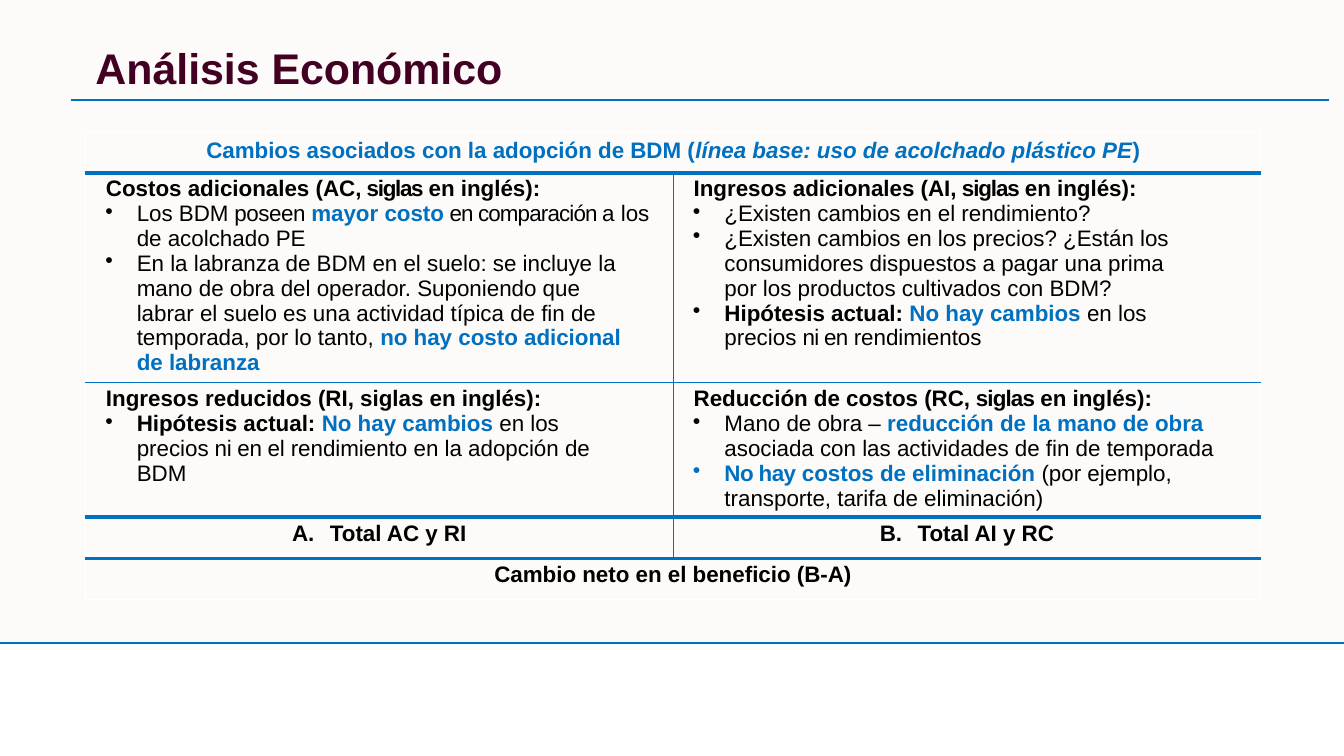
from dataclasses import dataclass

from lxml.etree import SubElement
from pptx import Presentation
from pptx.dml.color import RGBColor
from pptx.enum.shapes import MSO_CONNECTOR, MSO_SHAPE
from pptx.enum.text import MSO_ANCHOR, PP_ALIGN
from pptx.oxml import parse_xml
from pptx.oxml.ns import nsdecls, qn
from pptx.util import Pt

COLORS = {"blue": "0070C0", "black": "000000", "white": "FFFFFF",
          "plum": "420023", "cream": "FDFBF9"}
FONT = "Arial"
SLIDE_WIDTH, SLIDE_HEIGHT = 960, 540
FOOTER_TOP = 459.4
COLUMN_WIDTH = 419.8
ROW_HEIGHTS = [29.5, 150, 96, 29.5, 29.5]
TOP_MARGINS = [4.5, 2.4, 2.4, 3, 3]


@dataclass(frozen=True)
class Span:
    text: str
    bold: bool = False
    color: str = "black"
    italic: bool = False
    spacing: float = 0


@dataclass(frozen=True)
class Line:
    spans: list[Span]
    left: float = 0
    indent: float = 0
    right: float = 0
    before: float = 0
    centered: bool = False
    bullet: str = ""
    number: int = 0


@dataclass(frozen=True)
class Edge:
    color: str
    width: float


OUTER, INNER, THICK = Edge("white", 1), Edge("blue", 0.75), Edge("blue", 3)
ROW_EDGES = [OUTER, THICK, INNER, THICK, THICK, OUTER]


def strong(text: str, color: str = "black", spacing: float = 0) -> Span:
    return Span(text, True, color, spacing=spacing)


def heading(start: str, spacing: float = 0) -> Line:
    return Line([strong(start), strong(" siglas ", spacing=spacing),
                 strong("en inglés):")], left=7.5)


def bullet(*spans: Span, right: float = 0, before: float = 0) -> Line:
    return Line(list(spans), 29.5, -22.5, right, before, bullet="•")


def total(text: str, number: int) -> Line:
    return Line([strong(text)], 27, -27, centered=True, number=number)


def centered(*spans: Span) -> Line:
    return Line(list(spans), centered=True)


HYPOTHESIS = [strong("Hipótesis actual: "), strong("No hay cambios ", "blue")]

BUDGET = [
    [[centered(strong("Cambios asociados con la adopción de BDM (", "blue"),
               Span("línea base: uso de acolchado plástico PE", True, "blue", True),
               strong(")", "blue"))]],
    [[heading("Costos adicionales (AC,", -0.9),
      bullet(Span("Los BDM"), Span(" poseen ", spacing=-0.3),
             strong("mayor costo", "blue"),
             Span(" en comparación a", spacing=-0.6),
             Span(" los de acolchado PE"), before=0.2),
      bullet(Span("En la labranza de BDM en el suelo: se incluye la mano de obra "
                  "del operador. Suponiendo que labrar el suelo es una actividad "
                  "típica de fin de temporada, por lo tanto, "),
             strong("no hay costo adicional de labranza", "blue"), right=23)],
     [heading("Ingresos adicionales (AI,", -0.8),
      bullet(Span("¿Existen cambios en el rendimiento?"), before=0.2),
      bullet(Span("¿Existen cambios en los precios? ¿Están los consumidores "
                  "dispuestos a pagar una prima por los productos cultivados "
                  "con BDM?"), right=46),
      bullet(*HYPOTHESIS, Span("en los precios "), Span("ni en ", spacing=-0.5),
             Span("rendimientos"), right=46)]],
    [[heading("Ingresos reducidos (RI,"),
      bullet(*HYPOTHESIS, Span("en los precios"), Span(" ni en el ", spacing=-0.2),
             Span("rendimiento en la adopción de BDM"), right=30, before=0.2)],
     [heading("Reducción de costos (RC,", -0.6),
      bullet(Span("Mano de obra – "),
             strong("reducción de la mano de obra ", "blue"),
             Span("asociada con las actividades de fin de temporada"), before=0.2),
      bullet(strong("No hay ", "blue", -0.4),
             strong("costos de eliminación ", "blue"),
             Span("(por ejemplo, transporte, tarifa de eliminación)"))]],
    [[total("Total AC y RI", 1)], [total("Total AI y RC", 2)]],
    [[centered(strong("Cambio neto en el beneficio (B-A)"))]],
]


def rgb(color: str) -> RGBColor:
    return RGBColor.from_string(COLORS[color])


def add_rule(shapes, left: float, top: float, right: float) -> None:
    rule = shapes.add_connector(MSO_CONNECTOR.STRAIGHT, Pt(left), Pt(top), Pt(right), Pt(top))
    rule.line.color.rgb = rgb("blue")
    rule.line.width = Pt(1.5)
    SubElement(rule._element.spPr, qn("a:effectLst"))


def write_line(paragraph, line: Line) -> None:
    properties = paragraph._p.get_or_add_pPr()
    for name, length in (("marL", line.left), ("marR", line.right), ("indent", line.indent)):
        properties.set(name, str(int(Pt(length))))
    paragraph.alignment = PP_ALIGN.CENTER if line.centered else PP_ALIGN.LEFT
    if line.before:
        paragraph.space_before = Pt(line.before)
    if line.bullet:
        SubElement(properties, qn("a:buChar"), char=line.bullet)
        tabs = SubElement(properties, qn("a:tabLst"))
        SubElement(tabs, qn("a:tab"), pos=str(int(Pt(line.left))), algn="l")
    elif line.number:
        SubElement(properties, qn("a:buAutoNum"), type="alphaUcPeriod",
                   startAt=str(line.number))
    paragraph.font.name = FONT
    paragraph.font.size = Pt(16)
    for span in line.spans:
        run = paragraph.add_run()
        run.text = span.text
        run.font.bold = span.bold
        run.font.italic = span.italic
        run.font.color.rgb = rgb(span.color)
        if span.spacing:
            run._r.get_or_add_rPr().set("spc", str(round(span.spacing * 100)))


def set_edges(cell, edges: dict[str, Edge]) -> None:
    properties = cell._tc.get_or_add_tcPr()
    for position, (side, edge) in enumerate(edges.items()):
        properties.insert(position, parse_xml(
            f'<a:ln{side} {nsdecls("a")} w="{int(Pt(edge.width))}"><a:solidFill>'
            f'<a:srgbClr val="{COLORS[edge.color]}"/></a:solidFill></a:ln{side}>'))


def add_budget(shapes) -> None:
    frame = shapes.add_table(len(BUDGET), 2, Pt(61), Pt(94), Pt(2 * COLUMN_WIDTH),
                             Pt(sum(ROW_HEIGHTS)))
    budget = frame.table
    budget.first_row = budget.horz_banding = False
    for column in budget.columns:
        column.width = Pt(COLUMN_WIDTH)
    for index, entries in enumerate(BUDGET):
        budget.rows[index].height = Pt(ROW_HEIGHTS[index])
        split = len(entries) == 2
        for side in range(2):
            cell = budget.cell(index, side)
            cell.fill.background()
            set_edges(cell, {"L": INNER if split and side == 1 else OUTER,
                             "R": INNER if split and side == 0 else OUTER,
                             "T": ROW_EDGES[index], "B": ROW_EDGES[index + 1]})
        if not split:
            budget.cell(index, 0).merge(budget.cell(index, 1))
        for side, lines in enumerate(entries):
            cell = budget.cell(index, side)
            cell.margin_top, cell.margin_bottom = Pt(TOP_MARGINS[index]), Pt(0)
            text = cell.text_frame
            for order, line in enumerate(lines):
                write_line(text.add_paragraph() if order else text.paragraphs[0], line)


def add_title(title) -> None:
    title.left, title.top, title.width, title.height = Pt(61), Pt(29), Pt(888.5), Pt(42.5)
    title.text_frame.text = "Análisis Económico"
    title.text_frame.vertical_anchor = MSO_ANCHOR.MIDDLE
    paragraph = title.text_frame.paragraphs[0]
    paragraph.alignment = PP_ALIGN.LEFT
    paragraph.line_spacing = 0.9
    paragraph.font.name = FONT
    paragraph.font.size = Pt(30.6)
    paragraph.font.bold = True
    paragraph.font.color.rgb = rgb("plum")


def main() -> None:
    deck = Presentation()
    deck.slide_width, deck.slide_height = Pt(SLIDE_WIDTH), Pt(SLIDE_HEIGHT)
    slide = deck.slides.add_slide(deck.slide_layouts[5])
    shapes = slide.shapes
    backdrop = shapes.add_shape(MSO_SHAPE.RECTANGLE, 0, 0, Pt(SLIDE_WIDTH), Pt(FOOTER_TOP))
    backdrop.shadow.inherit = False
    backdrop.fill.solid()
    backdrop.fill.fore_color.rgb = rgb("cream")
    backdrop.line.fill.background()
    shapes._spTree.insert(2, backdrop._element)
    add_rule(shapes, 0, FOOTER_TOP, SLIDE_WIDTH)
    add_rule(shapes, 51, 71.3, 949.5)
    add_title(shapes.title)
    add_budget(shapes)
    deck.save("out.pptx")


if __name__ == "__main__":
    main()
